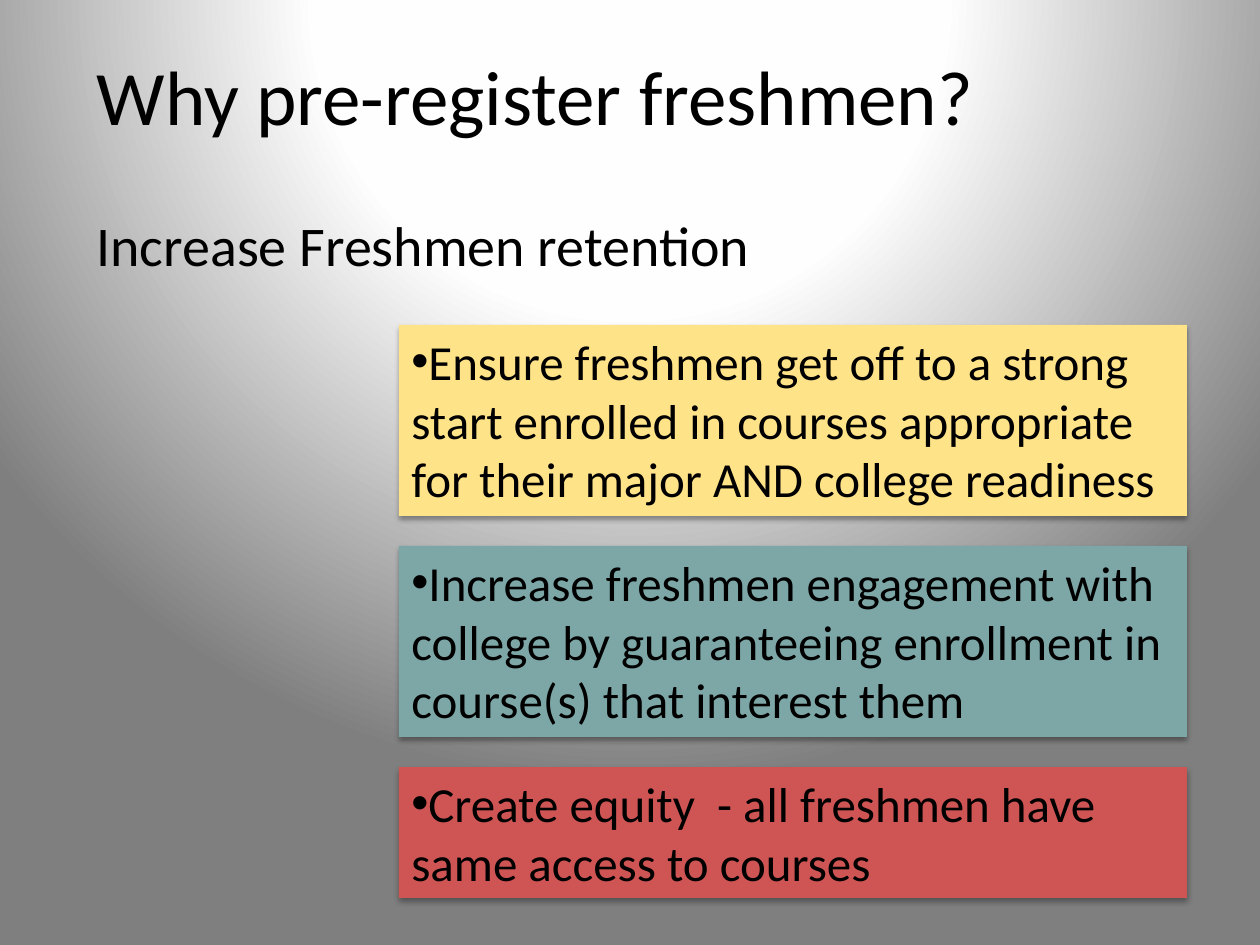
from pptx import Presentation
from pptx.dml.color import RGBColor
from pptx.enum.shapes import MSO_SHAPE
from pptx.enum.text import MSO_ANCHOR, MSO_AUTO_SIZE, PP_ALIGN
from pptx.oxml import parse_xml
from pptx.oxml.ns import nsdecls
from pptx.util import Pt

EMU_PER_PX = 914400 / 126
FONT = "Calibri"
BLACK = RGBColor(0x00, 0x00, 0x00)
YELLOW = RGBColor(0xFF, 0xE3, 0x89)
TEAL = RGBColor(0x7D, 0xA7, 0xA7)
RED = RGBColor(0xCF, 0x55, 0x55)

GRADIENT_STOPS = [(0, "FFFFFF"), (40, "FEFEFE"), (100, "7F7F7F")]
CARD_GAP = 30
REASONS = [
    ("Ensure freshmen get off to a strong start enrolled in courses appropriate "
     "for their major AND college readiness", YELLOW, 191),
    ("Increase freshmen engagement with college by guaranteeing enrollment in "
     "course(s) that interest them", TEAL, 191),
    ("Create equity  - all freshmen have same access to courses", RED, 131),
]


def px(length):
    return round(length * EMU_PER_PX)


def place(shape, left, top, width, height):
    shape.left, shape.top = px(left), px(top)
    shape.width, shape.height = px(width), px(height)


def write(shape, text, size):
    frame = shape.text_frame
    frame.word_wrap = True
    frame.auto_size = MSO_AUTO_SIZE.NONE
    frame.vertical_anchor = MSO_ANCHOR.TOP
    para = frame.paragraphs[0]
    para.text = text
    para.alignment = PP_ALIGN.LEFT
    para.font.name = FONT
    para.font.size = Pt(size)
    para.font.color.rgb = BLACK
    return para


def paint_background(page):
    stops = "".join(
        f'<a:gs pos="{position * 1000}"><a:srgbClr val="{color}"/></a:gs>'
        for position, color in GRADIENT_STOPS
    )
    background = parse_xml(
        f'<p:bg {nsdecls("p", "a")}><p:bgPr><a:gradFill rotWithShape="1">'
        f'<a:gsLst>{stops}</a:gsLst><a:path path="circle">'
        '<a:fillToRect l="50000" t="-80000" r="50000" b="180000"/></a:path>'
        '</a:gradFill><a:effectLst/></p:bgPr></p:bg>'
    )
    page.element.cSld.insert(0, background)


def add_heading(page, left, top, width):
    title = page.shapes.title
    place(title, left, top, width, 108)
    write(title, "Why pre-register freshmen?", 44)
    subtitle = page.shapes.add_textbox(0, 0, 0, 0)
    place(subtitle, left, top + 162, width, 80)
    write(subtitle, "Increase Freshmen retention", 32)


def add_card(page, left, top, width, height, text, color):
    card = page.shapes.add_shape(MSO_SHAPE.RECTANGLE, 0, 0, 0, 0)
    place(card, left, top, width, height)
    card.fill.solid()
    card.fill.fore_color.rgb = color
    card.line.fill.background()
    card.shadow.inherit = False
    card.element.spPr.find("{*}effectLst").append(parse_xml(
        f'<a:outerShdw {nsdecls("a")} blurRad="40000" dist="23000" dir="5400000" '
        'rotWithShape="0"><a:srgbClr val="000000"><a:alpha val="35000"/>'
        '</a:srgbClr></a:outerShdw>'
    ))
    para = write(card, text, 28)
    properties = para._p.get_or_add_pPr()
    for tag in (f'<a:buFont {nsdecls("a")} typeface="Arial"/>',
                f'<a:buChar {nsdecls("a")} char="•"/>'):
        properties.insert_element_before(parse_xml(tag), "a:tabLst", "a:defRPr", "a:extLst")


def add_reasons(page, left, top, width):
    for text, color, height in REASONS:
        add_card(page, left, top, width, height, text, color)
        top += height + CARD_GAP


def main():
    deck = Presentation()
    deck.slide_width, deck.slide_height = px(1260), px(945)
    page = deck.slides.add_slide(deck.slide_layouts[5])
    paint_background(page)
    add_heading(page, 84, 42, 987)
    add_reasons(page, 399, 325, 788)
    deck.save("out.pptx")


if __name__ == "__main__":
    main()
